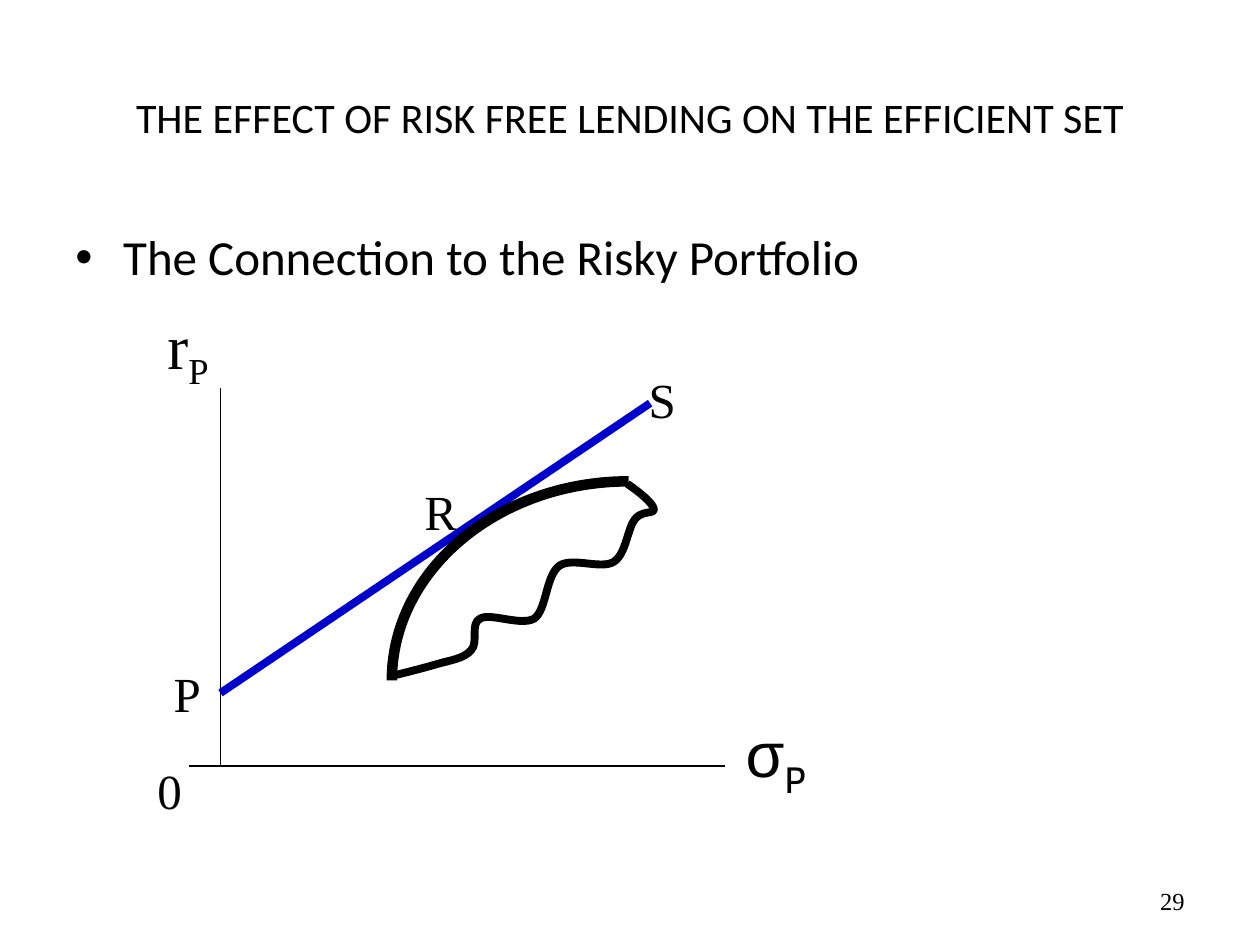
import dataclasses

import pptx
import pptx.dml.color
import pptx.enum.shapes
import pptx.enum.text
import pptx.oxml.ns
import pptx.oxml.xmlchemy
import pptx.util
from pptx.util import Inches

ALIGN = pptx.enum.text.PP_ALIGN
ANCHOR = pptx.enum.text.MSO_ANCHOR


@dataclasses.dataclass(frozen=True)
class Theme:
    ink: str = "000000"
    lending: str = "0000CC"
    sans: str = "Calibri"
    serif: str = "Times New Roman"
    title: int = 24
    body: int = 28
    axis: int = 36
    number: int = 14


@dataclasses.dataclass(frozen=True)
class Box:
    left: float
    top: float
    width: float
    height: float

    def point(self, x, y):
        return Inches(self.left + x), Inches(self.top + y)

    def inner(self, x, y, width, height):
        return Box(self.left + x, self.top + y, width, height)


THEME = Theme()

# Cubic curves: a start point, then two controls and an end for each piece.
EFFICIENT_SET = [(3.99, 1.82), (2.95, 1.82), (2.11, 2.53), (2.11, 3.4)]
FEASIBLE_EDGE = [
    (2.13, 3.36),
    (2.25, 3.33), (2.37, 3.3), (2.47, 3.27),
    (2.57, 3.24), (2.68, 3.23), (2.74, 3.16),
    (2.8, 3.1), (2.73, 2.95), (2.81, 2.91),
    (2.89, 2.86), (3.13, 2.97), (3.24, 2.91),
    (3.34, 2.84), (3.33, 2.57), (3.44, 2.49),
    (3.54, 2.42), (3.77, 2.52), (3.87, 2.46),
    (3.97, 2.4), (3.98, 2.19), (4.04, 2.12),
    (4.09, 2.05), (4.2, 2.08), (4.19, 2.04),
    (4.18, 1.99), (4.08, 1.91), (3.98, 1.84),
]


def new_element(tag):
    return pptx.oxml.xmlchemy.OxmlElement(tag)


def style_line(line, color, weight):
    line.color.rgb = pptx.dml.color.RGBColor.from_string(color)
    line.width = pptx.util.Pt(weight)


def style_span(span, font, size):
    span.font.name = font
    span.font.size = pptx.util.Pt(size)
    span.font.color.rgb = pptx.dml.color.RGBColor.from_string(THEME.ink)


def add_text(page, box, text, font, size, align=ALIGN.LEFT, anchor=ANCHOR.TOP):
    shape = page.shapes.add_textbox(
        *box.point(0, 0), Inches(box.width), Inches(box.height))
    frame = shape.text_frame
    frame.word_wrap = True
    frame.vertical_anchor = anchor
    frame.text = text
    para = frame.paragraphs[0]
    para.alignment = align
    style_span(para.runs[0], font, size)
    return shape


def add_bullet(page, box, text):
    shape = add_text(page, box, text, THEME.sans, THEME.body)
    properties = shape.text_frame.paragraphs[0]._p.get_or_add_pPr()
    properties.set("marL", str(Inches(0.38)))
    properties.set("indent", str(-Inches(0.38)))
    for tag, name, value in (("buFont", "typeface", "Arial"), ("buChar", "char", "•")):
        bullet = new_element(f"a:{tag}")
        bullet.set(name, value)
        properties.append(bullet)


def add_label(page, box, text, font=THEME.serif, size=THEME.body):
    shape = add_text(page, box, text, font, size)
    shape.text_frame.margin_right = 0
    return shape


def add_axis_label(page, box, symbol, symbol_font, subscript_font):
    """Label an axis with a symbol and the subscript P."""
    shape = add_label(page, box, symbol, symbol_font, THEME.axis)
    span = shape.text_frame.paragraphs[0].add_run()
    span.text = "P"
    style_span(span, subscript_font, THEME.axis)
    span.font._element.set("baseline", "-25000")


def add_line(page, box, start, end, color, weight):
    line = page.shapes.add_connector(
        pptx.enum.shapes.MSO_CONNECTOR.STRAIGHT, *box.point(*start), *box.point(*end))
    style_line(line.line, color, weight)
    line._element.spPr.append(new_element("a:effectLst"))


def add_curve(page, box, points, weight):
    """Draw an open curve; each three points after the first are one cubic piece."""
    places = [box.point(*point) for point in points]
    builder = page.shapes.build_freeform(*places[0])
    builder.add_line_segments(places[1:], close=False)
    shape = builder.convert_to_shape()
    steps = list(shape._element.iter(pptx.oxml.ns.qn("a:lnTo")))
    for first in range(0, len(steps), 3):
        piece = new_element("a:cubicBezTo")
        steps[first].addprevious(piece)
        for step in steps[first:first + 3]:
            piece.append(step[0])
            step.getparent().remove(step)
    shape.shadow.inherit = False
    shape.fill.background()
    style_line(shape.line, THEME.ink, weight)


def add_diagram(page, box):
    """Plot the efficient set and the lending line on return and risk axes."""
    add_line(page, box, (0.75, 1.08), (0.75, 4.08), THEME.ink, 0.75)
    add_line(page, box, (0.5, 4.08), (4.75, 4.08), THEME.ink, 0.75)
    add_line(page, box, (0.75, 3.5), (4.16, 1.2), THEME.lending, 4.5)
    add_axis_label(page, box.inner(0.23, 0.38, 0.55, 0.7), "r", THEME.serif, THEME.serif)
    add_axis_label(page, box.inner(4.82, 3.62, 1.2, 0.7), "σ", "Arial", "Cabin")
    add_curve(page, box, EFFICIENT_SET, 6)
    add_curve(page, box, FEASIBLE_EDGE, 4.5)
    for text, x, y, width in (
        ("0", 0.15, 3.99, 0.4),
        ("S", 4.05, 0.88, 0.42),
        ("R", 2.27, 1.77, 0.46),
        ("P", 0.28, 3.22, 0.42),
    ):
        add_label(page, box.inner(x, y, width, 0.57), text)


def main():
    deck = pptx.Presentation()
    deck.slide_width, deck.slide_height = Inches(10), Inches(7.5)
    page = deck.slides.add_slide(deck.slide_layouts[6])
    add_text(page, Box(0.5, 0.3, 9, 1.25),
             "THE EFFECT OF RISK FREE LENDING ON THE EFFICIENT SET",
             THEME.sans, THEME.title, ALIGN.CENTER, ANCHOR.MIDDLE)
    add_bullet(page, Box(0.5, 1.75, 9, 4.95), "The Connection to the Risky Portfolio")
    add_text(page, Box(7.17, 6.95, 2.33, 0.4), "29",
             THEME.serif, THEME.number, ALIGN.RIGHT, ANCHOR.MIDDLE)
    add_diagram(page, Box(1, 2, 6.1, 4.6))
    deck.save("out.pptx")


if __name__ == "__main__":
    main()
